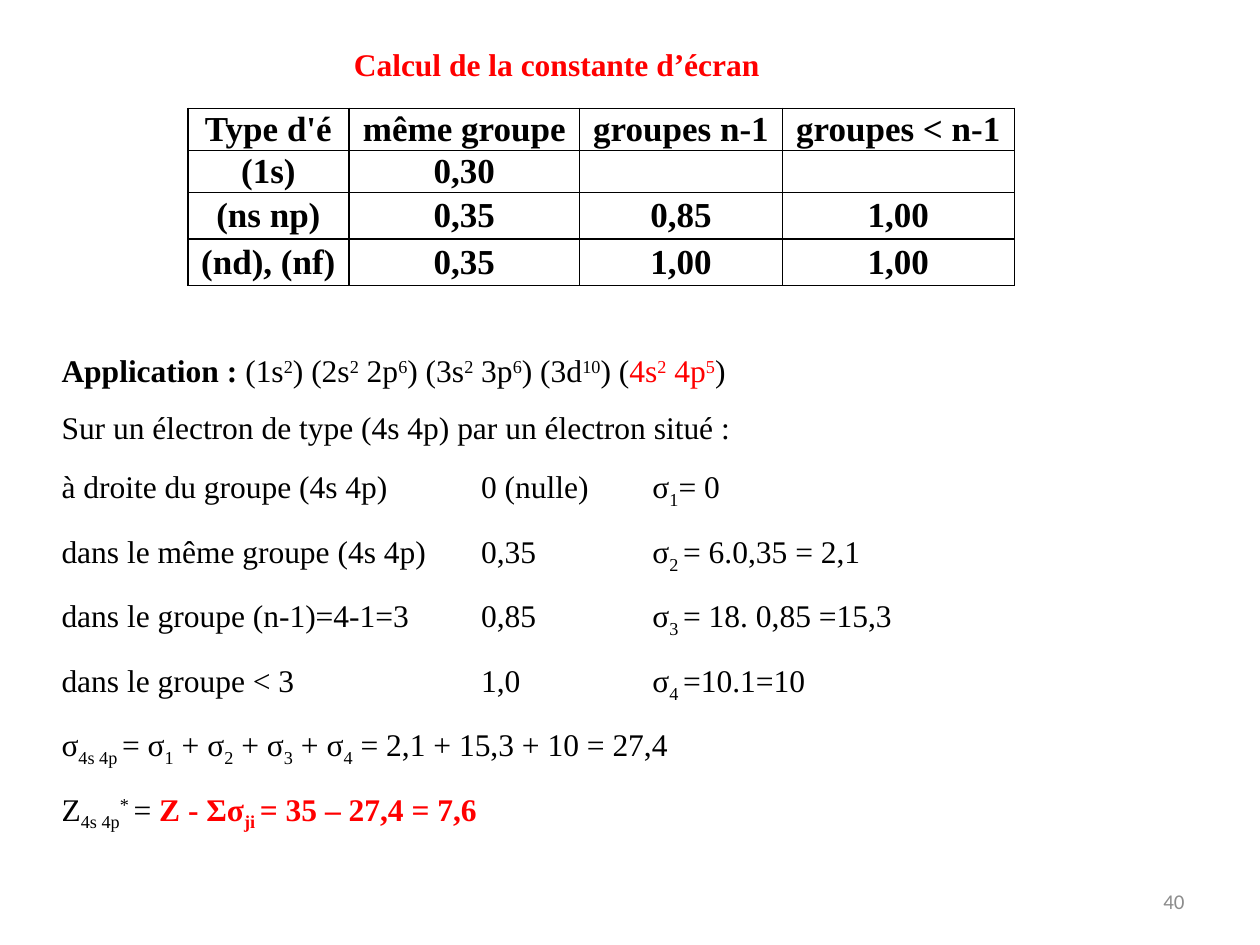
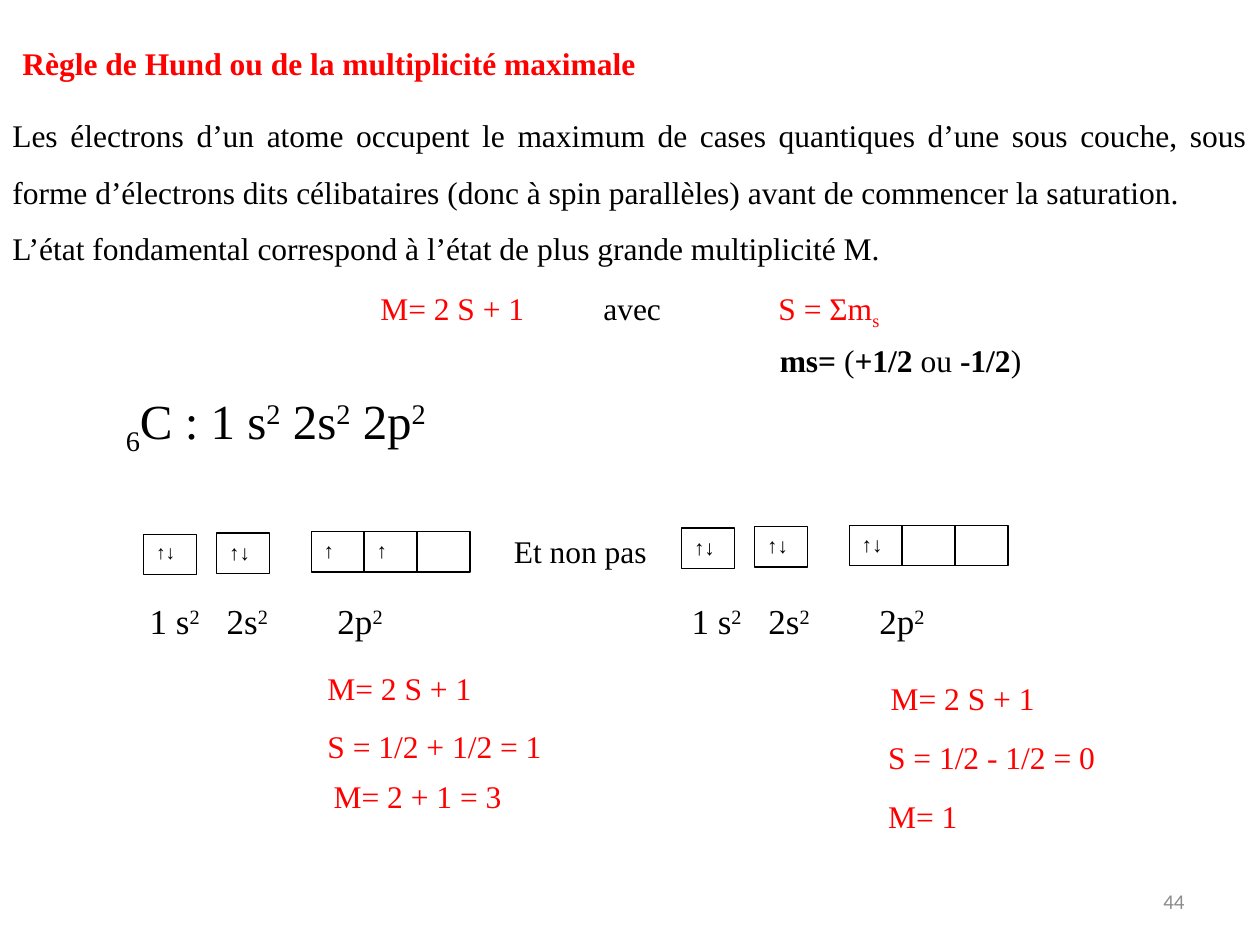
from lxml.etree import SubElement
from pptx import Presentation
from pptx.dml.color import RGBColor
from pptx.enum.shapes import MSO_SHAPE
from pptx.enum.text import MSO_ANCHOR, PP_ALIGN
from pptx.oxml.ns import qn
from pptx.util import Inches, Pt

BLACK = RGBColor(0, 0, 0)
RED = RGBColor(255, 0, 0)
WHITE = RGBColor(255, 255, 255)
GRAY = RGBColor(0x8C, 0x8C, 0x8C)
SERIF = "Times New Roman"
BASELINES = {"^": "30000", "_": "-25000"}
MARKS = "!#^_"

SCREENING = [
    ["Type d'é", "même groupe", "groupes n-1", "groupes < n-1"],
    ["(1s)", "0,30", "", ""],
    ["(ns np)", "0,35", "0,85", "1,00"],
    ["(nd), (nf)", "0,35", "1,00", "1,00"],
]
APPLICATION = [
    "!Application : |(1s|^2|) (2s|^2| 2p|^6|) (3s|^2| 3p|^6|) (3d|^10|) (|#4s|#^2|# 4p|#^5|)",
    "Sur un électron de type (4s 4p) par un électron situé :",
    "à droite du groupe (4s 4p)\t0 (nulle)\tσ|_1|= 0",
    "dans le même groupe (4s 4p)\t0,35\tσ|_2 |= 6.0,35 = 2,1",
    "dans le groupe (n-1)=4-1=3\t0,85\tσ|_3 |= 18. 0,85 =15,3",
    "dans le groupe < 3\t1,0\tσ|_4 |=10.1=10",
    "σ|_4s 4p |= σ|_1| + σ|_2| + σ|_3| + σ|_4| = 2,1 + 15,3 + 10 = 27,4",
    "Z|_4s 4p|^* |= |!#Z - Σσ|!#_ji |!#= 35 – 27,4 = 7,6",
]
HUND_RULE = [
    "Les électrons d’un atome occupent le maximum de cases quantiques d’une sous couche, "
    "sous forme d’électrons dits célibataires (donc à spin parallèles) avant de commencer "
    "la saturation.",
    "L’état fondamental correspond à l’état de plus grande multiplicité M.",
    "\t|#M= 2 S + 1|\tavec\t|#S = Σm|#_s",
]


def add_spans(para, marked_text, size, color=BLACK, face=SERIF):
    for part in marked_text.split("|"):
        text = part.lstrip(MARKS)
        marks = part[:len(part) - len(text)]
        span = para.add_run()
        span.text = text
        span.font.name = face
        span.font.size = Pt(size)
        span.font.bold = "!" in marks
        span.font.color.rgb = RED if "#" in marks else color
        for mark, shift in BASELINES.items():
            if mark in marks:
                span.font._element.set("baseline", shift)


def set_tabs(para, stops):
    tab_list = SubElement(para._p.get_or_add_pPr(), qn("a:tabLst"))
    for stop in stops:
        SubElement(tab_list, qn("a:tab"), pos=str(Inches(stop)), algn="l")


def add_text(page, box, lines, size=18, color=BLACK, face=SERIF,
             align=PP_ALIGN.LEFT, spacing=1.0, tabs=()):
    frame = page.shapes.add_textbox(*map(Inches, box)).text_frame
    frame.word_wrap = True
    for index, line in enumerate(lines):
        para = frame.add_paragraph() if index else frame.paragraphs[0]
        para.line_spacing = spacing
        para.alignment = align
        if "\t" in line:
            para.alignment = PP_ALIGN.LEFT
            set_tabs(para, tabs)
        add_spans(para, line, size, color, face)
    return frame


def add_page(deck, number):
    page = deck.slides.add_slide(deck.slide_layouts[6])
    frame = add_text(page, (7.17, 6.95, 2.33, 0.4), [number], 12, GRAY,
                     "Calibri", PP_ALIGN.RIGHT)
    frame.vertical_anchor = MSO_ANCHOR.MIDDLE
    return page


def add_title(page, box, title, spacing=1.0):
    add_text(page, box, ["!#" + title], spacing=spacing)


def set_borders(cell):
    properties = cell._tc.get_or_add_tcPr()
    for index, side in enumerate(("lnL", "lnR", "lnT", "lnB")):
        line = properties.makeelement(qn("a:" + side), {"w": str(Pt(1))})
        fill = SubElement(line, qn("a:solidFill"))
        SubElement(fill, qn("a:srgbClr"), val=str(BLACK))
        properties.insert(index, line)


def add_screening_table(page, left, top):
    widths = [1.28, 1.83, 1.61, 1.84]
    heights = [0.3, 0.3, 0.37, 0.37]
    table = page.shapes.add_table(
        len(heights), len(widths), Inches(left), Inches(top),
        Inches(sum(widths)), Inches(sum(heights))).table
    table.first_row = table.horz_banding = False
    for column, width in zip(table.columns, widths):
        column.width = Inches(width)
    for row, height, values in zip(table.rows, heights, SCREENING):
        row.height = Inches(height)
        for cell, value in zip(row.cells, values):
            cell.margin_left = cell.margin_right = Inches(0.07)
            cell.margin_top = cell.margin_bottom = 0
            cell.vertical_anchor = MSO_ANCHOR.MIDDLE
            cell.fill.background()
            set_borders(cell)
            para = cell.text_frame.paragraphs[0]
            para.alignment = PP_ALIGN.CENTER
            para.space_after = Pt(10)
            if value:
                add_spans(para, "!" + value, 20)


def add_quantum_box(page, left, top, spins, size):
    box = page.shapes.add_shape(MSO_SHAPE.RECTANGLE, Inches(left), Inches(top),
                                Inches(0.42), Inches(0.32))
    box.shadow.inherit = False
    box.fill.solid()
    box.fill.fore_color.rgb = WHITE
    box.line.color.rgb = BLACK
    box.line.width = Pt(0.75)
    box.text_frame.vertical_anchor = MSO_ANCHOR.TOP
    if spins:
        para = box.text_frame.paragraphs[0]
        para.alignment = PP_ALIGN.LEFT
        para.space_after = Pt(10)
        add_spans(para, spins, size)


def add_configuration(page, left, top, p_spins, label_left, first_size=12):
    subshells = [(0, ["↑↓"]), (0.58, ["↑↓"]), (1.33, p_spins)]
    for rank, (offset, boxes) in enumerate(subshells):
        for index, spins in enumerate(boxes):
            add_quantum_box(page, left + offset + 0.42 * index, top - 0.01 * rank,
                            spins, 12 if rank else first_size)
    add_text(page, (label_left, 4.71, 2.17, 0.44),
             ["1 s|^2|\t2s|^2|\t2p|^2"], 20, tabs=(0.61, 1.49))


def add_multiplicity(page, steps):
    for left, top, width, formula in steps:
        add_text(page, (left, top, width, 0.4), ["#" + formula])


def build_screening_page(deck):
    page = add_page(deck, "40")
    add_text(page, (0.39, 2.59, 8.36, 3.74), APPLICATION,
             align=PP_ALIGN.JUSTIFY, spacing=1.5, tabs=(3.33, 4.69))
    add_screening_table(page, 1.49, 0.86)
    add_title(page, (2.71, 0.16, 3.52, 0.5), "Calcul de la constante d’écran", 1.5)


def build_hund_page(deck):
    page = add_page(deck, "44")
    add_title(page, (0.08, 0.3, 5.12, 0.4), "Règle de Hund ou de la multiplicité maximale")
    add_text(page, (0, 0.72, 10, 2.32), HUND_RULE,
             align=PP_ALIGN.JUSTIFY, spacing=1.5, tabs=(2.92, 4.69, 6.08))
    add_text(page, (6.09, 2.66, 2.19, 0.4), ["!ms=| (|!+1/2 |ou |!-1/2|)"])
    add_text(page, (0.9, 3.05, 3.15, 0.57), ["_6|C : 1 s|^2| 2s|^2| 2p|^2"], 28)
    add_configuration(page, 1.14, 4.24, ["↑", "↑", ""], 1.09, first_size=11)
    add_text(page, (3.98, 4.17, 1.34, 0.4), ["Et non pas"])
    add_configuration(page, 5.41, 4.19, ["↑↓", "", ""], 5.39)
    add_multiplicity(page, [
        (2.5, 5.26, 1.42, "M= 2 S + 1"),
        (2.5, 5.72, 1.92, "S = 1/2 + 1/2 = 1"),
        (2.55, 6.12, 1.67, "M= 2 + 1 = 3"),
        (6.97, 5.34, 1.42, "M= 2 S + 1"),
        (6.95, 5.81, 1.86, "S = 1/2 - 1/2 = 0"),
        (6.95, 6.28, 0.88, "M= 1"),
    ])


def main():
    deck = Presentation()
    deck.slide_width = Inches(10)
    deck.slide_height = Inches(7.5)
    build_screening_page(deck)
    build_hund_page(deck)
    deck.save("out.pptx")


if __name__ == "__main__":
    main()
